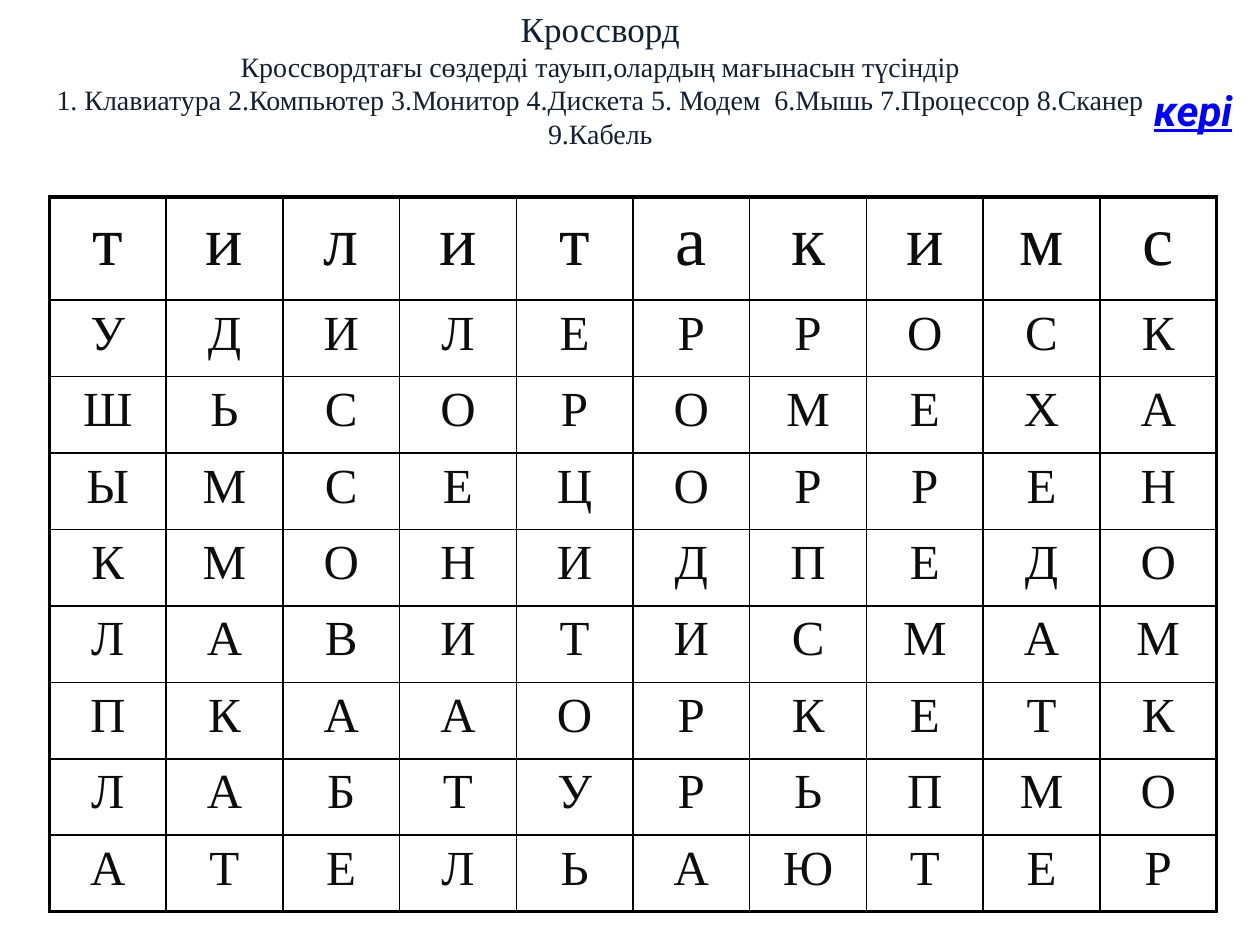
from lxml.etree import SubElement
from pptx import Presentation
from pptx.dml.color import RGBColor
from pptx.enum.text import MSO_ANCHOR as Anchor, MSO_AUTO_SIZE as AutoSize, PP_ALIGN as Align
from pptx.oxml.ns import qn
from pptx.util import Pt

NAVY = RGBColor(0x12, 0x20, 0x31)
INK = RGBColor(0x0D, 0x0D, 0x0D)
BLACK = RGBColor(0, 0, 0)
BLUE = RGBColor(0, 0, 0xFF)
SERIF = "Times New Roman"
THIN, THICK = 1, 2.25

TITLE = "Кроссворд"
TASK_LINES = [
    "Кроссвордтағы сөздерді тауып,олардың мағынасын түсіндір",
    "1. Клавиатура 2.Компьютер 3.Монитор 4.Дискета 5. Модем  6.Мышь 7.Процессор 8.Сканер",
    "9.Кабель",
]
LETTER_ROWS = [
    "тилитакимс",
    "УДИЛЕРРОСК",
    "ШЬСОРОМЕХА",
    "ЫМСЕЦОРРЕН",
    "КМОНИДПЕДО",
    "ЛАВИТИСМАМ",
    "ПКААОРКЕТК",
    "ЛАБТУРЬПМО",
    "АТЕЛЬАЮТЕР",
]


class SlideBuilder:
    def __init__(self, page):
        self.page = page

    def span(self, para, text, color, **formats):
        span = para.add_run()
        span.text = text
        for name, value in formats.items():
            setattr(span.font, name, value)
        span.font.color.rgb = color

    def text_box(self, left, top, width, height, **formats):
        """Add an empty text box and return its first paragraph."""
        box = self.page.shapes.add_textbox(Pt(left), Pt(top), Pt(width), Pt(height))
        for name, value in formats.items():
            setattr(box.text_frame, name, value)
        return box.text_frame.paragraphs[0]

    def border(self, cell, side, width):
        line = SubElement(cell._tc.get_or_add_tcPr(), qn(f"a:ln{side}"), w=str(Pt(width)))
        fill = SubElement(line, qn("a:solidFill"))
        SubElement(fill, qn("a:srgbClr"), val=str(BLACK))

    def letter_grid(self, left, top, width, row_heights, rows, sizes):
        """Add a table of single letters with a thick outer frame."""
        last_row, last_column = len(rows) - 1, len(rows[0]) - 1
        frame = self.page.shapes.add_table(
            len(rows), len(rows[0]), Pt(left), Pt(top), Pt(width), Pt(sum(row_heights)))
        table = frame.table
        table.first_row = table.horz_banding = False
        for column in table.columns:
            column.width = Pt(width / len(rows[0]))
        for row, letters in enumerate(rows):
            table.rows[row].height = Pt(row_heights[row])
            for column, letter in enumerate(letters):
                cell = table.cell(row, column)
                para = cell.text_frame.paragraphs[0]
                para.alignment = Align.CENTER
                self.span(para, letter, INK, name=SERIF, size=Pt(sizes[row]))
                outer = {"L": column == 0, "R": column == last_column,
                         "T": row == 0, "B": row == last_row}
                for side, is_outer in outer.items():
                    self.border(cell, side, THICK if is_outer else THIN)
                cell.fill.background()


def main():
    deck = Presentation()
    deck.slide_width, deck.slide_height = Pt(720), Pt(540)
    page = deck.slides.add_slide(deck.slide_layouts[6])
    builder = SlideBuilder(page)

    heading = builder.text_box(0, 0, 686, 90, word_wrap=True, vertical_anchor=Anchor.MIDDLE)
    heading.alignment = Align.CENTER
    builder.span(heading, TITLE, NAVY, name=SERIF, size=Pt(20))
    for line in TASK_LINES:
        heading.add_line_break()
        builder.span(heading, line, NAVY, name=SERIF, size=Pt(16))

    small_rows = len(LETTER_ROWS) - 1
    builder.letter_grid(28.2, 112.5, 667, [59] + [43.7] * small_rows,
                        LETTER_ROWS, [40] + [28] * small_rows)

    back = builder.text_box(652.3, 44.6, 61.2, 65.5, word_wrap=False,
                            auto_size=AutoSize.SHAPE_TO_FIT_TEXT)
    builder.span(back, "кері", BLUE, name="Roboto", size=Pt(24),
                 bold=True, italic=True, underline=True)

    deck.save("out.pptx")


if __name__ == "__main__":
    main()
